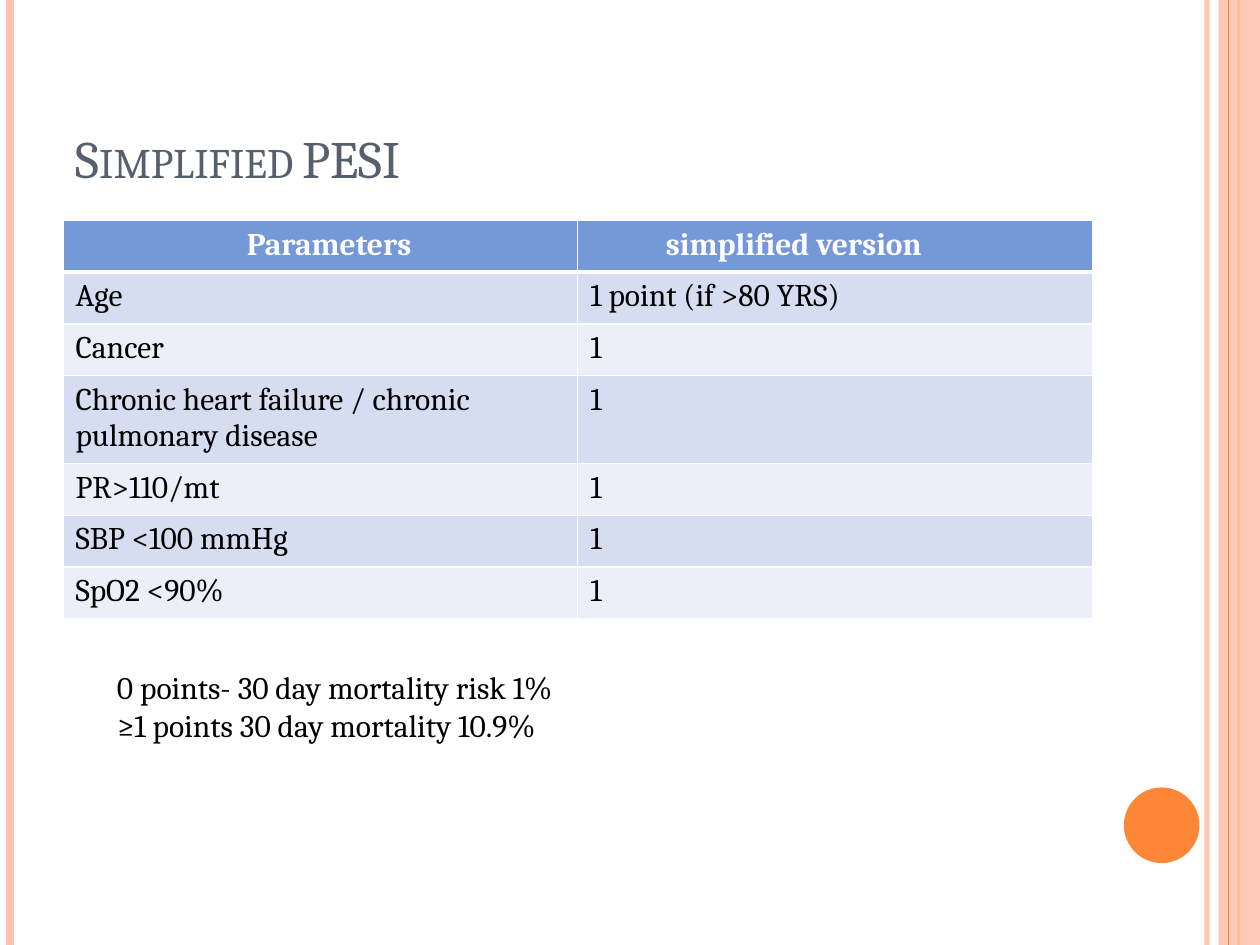
from dataclasses import dataclass

from lxml import etree
from pptx import Presentation
from pptx.dml.color import RGBColor
from pptx.enum.shapes import MSO_CONNECTOR, MSO_SHAPE
from pptx.enum.text import MSO_ANCHOR
from pptx.oxml.ns import qn
from pptx.util import Inches, Pt

STRAIGHT = MSO_CONNECTOR.STRAIGHT
RECTANGLE = MSO_SHAPE.RECTANGLE
OVAL = MSO_SHAPE.OVAL
BOTTOM = MSO_ANCHOR.BOTTOM


@dataclass(frozen=True)
class Theme:
    font: str = "Cambria"
    title_size: int = 30
    body_size: int = 18
    title: str = "575F6D"
    text: str = "000000"
    white: str = "FFFFFF"
    peach: str = "FEC3AE"
    orange: str = "FE8637"
    header: str = "7598D9"
    bands: tuple = ("D6DDF1", "ECEFF8")


THEME = Theme()
SLIDE_W, SLIDE_H = 10, 7.5

HEADERS = ("Parameters", "simplified version")
HEADER_INDENTS = (1.46, 0.7)
CRITERIA = (
    ("Age", "1 point (if >80 YRS)"),
    ("Cancer", "1"),
    ("Chronic heart failure / chronic pulmonary disease", "1"),
    ("PR>110/mt", "1"),
    ("SBP <100 mmHg", "1"),
    ("SpO2 <90%", "1"),
)
MORTALITY = "0 points- 30 day mortality risk 1%\n≥1 points 30 day mortality 10.9%"


def rgb(color):
    return RGBColor.from_string(color)


def set_opacity(fill_parent, percent):
    """Make the solid fill found below the given element translucent."""
    color = fill_parent.find(".//" + qn("a:srgbClr"))
    etree.SubElement(color, qn("a:alpha"), val=str(percent * 1000))


def write(frame, text, size, color, bold=False):
    frame.text = text
    frame.word_wrap = True
    for paragraph in frame.paragraphs:
        for run in paragraph.runs:
            run.font.name = THEME.font
            run.font.size = Pt(size)
            run.font.bold = bold
            run.font.color.rgb = rgb(color)


def add_stripe(slide, x, top, height, color, width, opacity=None):
    stripe = slide.shapes.add_connector(
        STRAIGHT, Inches(x), Inches(top), Inches(x), Inches(top + height))
    stripe.line.color.rgb = rgb(color)
    stripe.line.width = Pt(width)
    properties = stripe.element.spPr
    if opacity:
        set_opacity(properties, opacity)
    etree.SubElement(properties, qn("a:effectLst"))


def add_block(slide, preset, box, color):
    block = slide.shapes.add_shape(preset, *map(Inches, box))
    block.shadow.inherit = False
    block.fill.solid()
    block.fill.fore_color.rgb = rgb(color)
    block.line.fill.background()
    return block


def add_frame_decoration(slide, box):
    """Vertical stripes along both edges and the round page marker."""
    left, top, width, height = box
    right = left + width
    add_stripe(slide, right - 0.42, top, height, THEME.peach, 3, opacity=93)
    add_stripe(slide, left + 0.08, top, height, THEME.peach, 4.5)
    add_stripe(slide, right - 0.17, top, height, THEME.orange, 1.5)
    band = add_block(slide, RECTANGLE, (right - 0.33, top, 0.33, height), THEME.peach)
    set_opacity(band.element.spPr, 87)
    add_stripe(slide, right - 0.25, top, height, THEME.orange, 0.75)
    add_block(slide, OVAL, (right - 1.08, top + height - 1.25, 0.6, 0.6), THEME.orange)


def add_title(slide, box):
    frame = slide.shapes.add_textbox(*map(Inches, box)).text_frame
    frame.vertical_anchor = BOTTOM
    write(frame, "Simplified PESI", THEME.title_size, THEME.title)
    frame.paragraphs[0].runs[0].font._element.set("cap", "small")


def set_borders(cell, top, bottom):
    properties = cell._tc.get_or_add_tcPr()
    widths = {"a:lnL": 1, "a:lnR": 1, "a:lnT": top, "a:lnB": bottom}
    for position, (side, width) in enumerate(widths.items()):
        border = etree.Element(qn(side), w=str(Pt(width)))
        fill = etree.SubElement(border, qn("a:solidFill"))
        etree.SubElement(fill, qn("a:srgbClr"), val=THEME.white)
        properties.insert(position, border)


def add_criteria_table(slide, box):
    rows = (HEADERS, *CRITERIA)
    table = slide.shapes.add_table(len(rows), len(HEADERS), *map(Inches, box)).table
    for r, texts in enumerate(rows):
        is_header = r == 0
        table.rows[r].height = Inches(0.41)
        for c, text in enumerate(texts):
            cell = table.cell(r, c)
            cell.fill.solid()
            cell.fill.fore_color.rgb = rgb(
                THEME.header if is_header else THEME.bands[(r - 1) % 2])
            set_borders(cell, top=3 if r == 1 else 1, bottom=3 if is_header else 1)
            write(cell.text_frame, text, THEME.body_size,
                  THEME.white if is_header else THEME.text, bold=is_header)
            if is_header:
                cell.margin_left = Inches(HEADER_INDENTS[c])


def add_mortality_note(slide, box):
    frame = slide.shapes.add_textbox(*map(Inches, box)).text_frame
    write(frame, MORTALITY, THEME.body_size, THEME.text)


def main():
    deck = Presentation()
    deck.slide_width, deck.slide_height = Inches(SLIDE_W), Inches(SLIDE_H)
    slide = deck.slides.add_slide(deck.slide_layouts[6])
    add_frame_decoration(slide, (0, 0, SLIDE_W, SLIDE_H))
    add_title(slide, (0.5, 0.3, 8.17, 1.25))
    add_criteria_table(slide, (0.5, 1.75, 8.17, 2.87))
    add_mortality_note(slide, (0.83, 5.25, 8.75, 0.71))
    deck.save("out.pptx")


if __name__ == "__main__":
    main()
